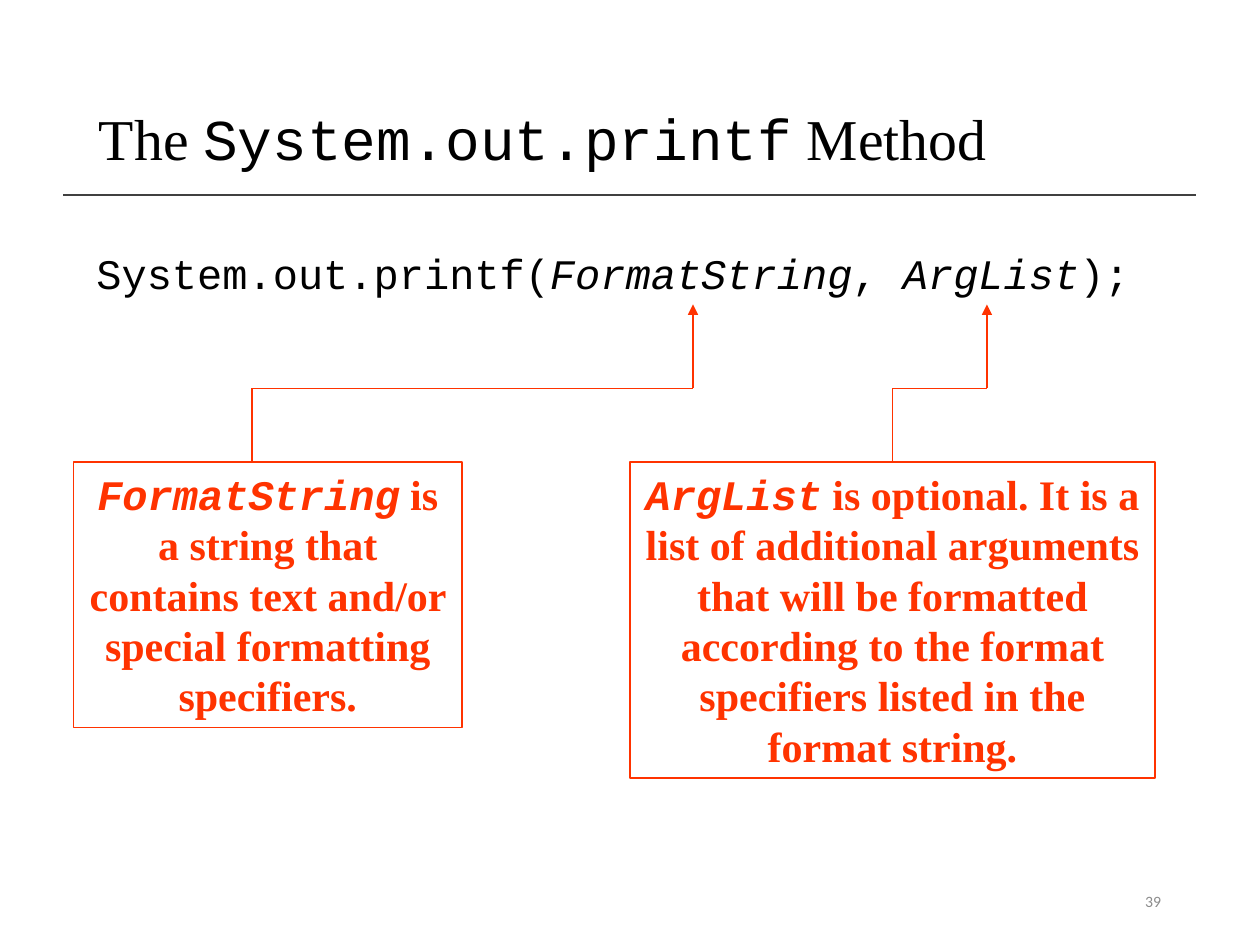
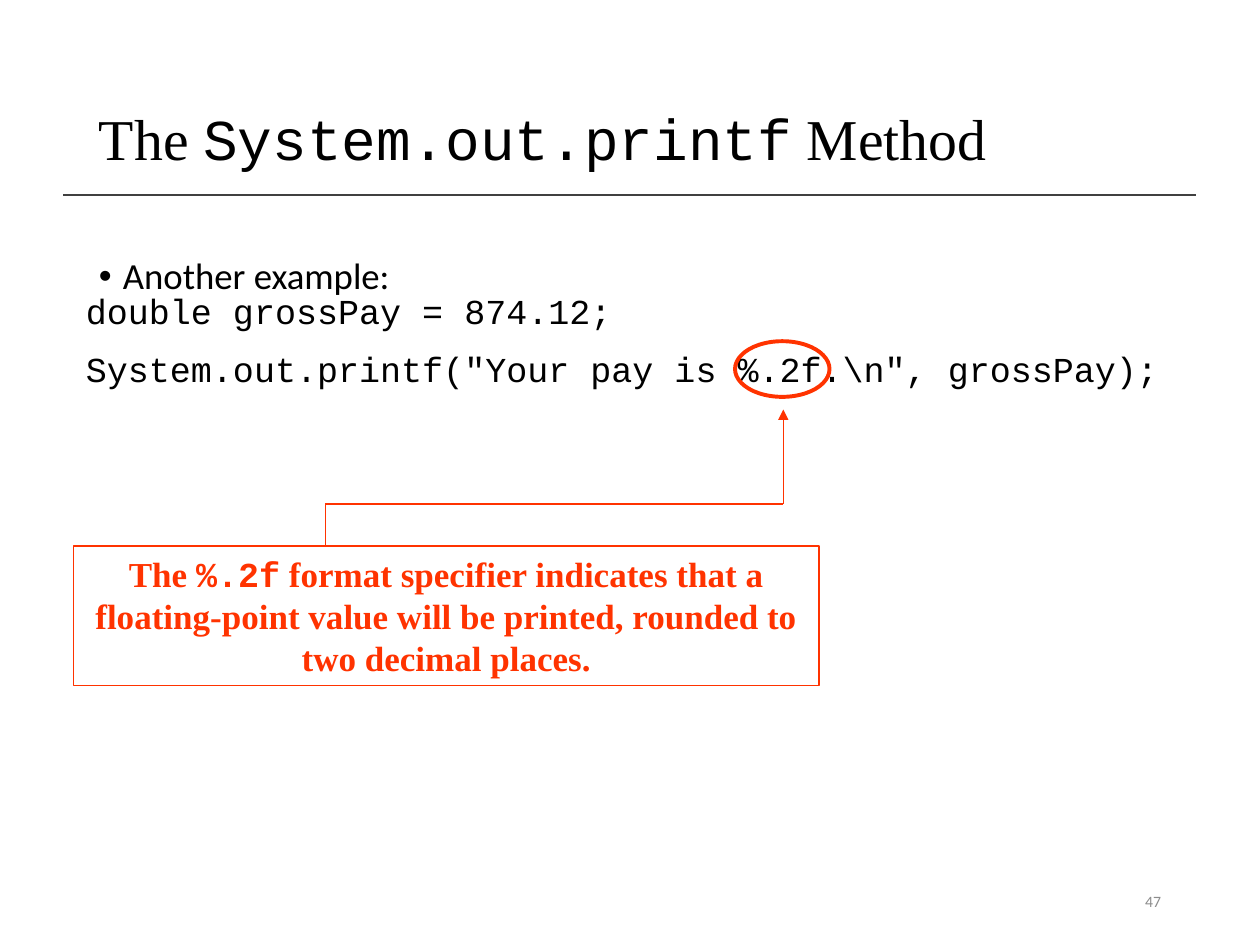
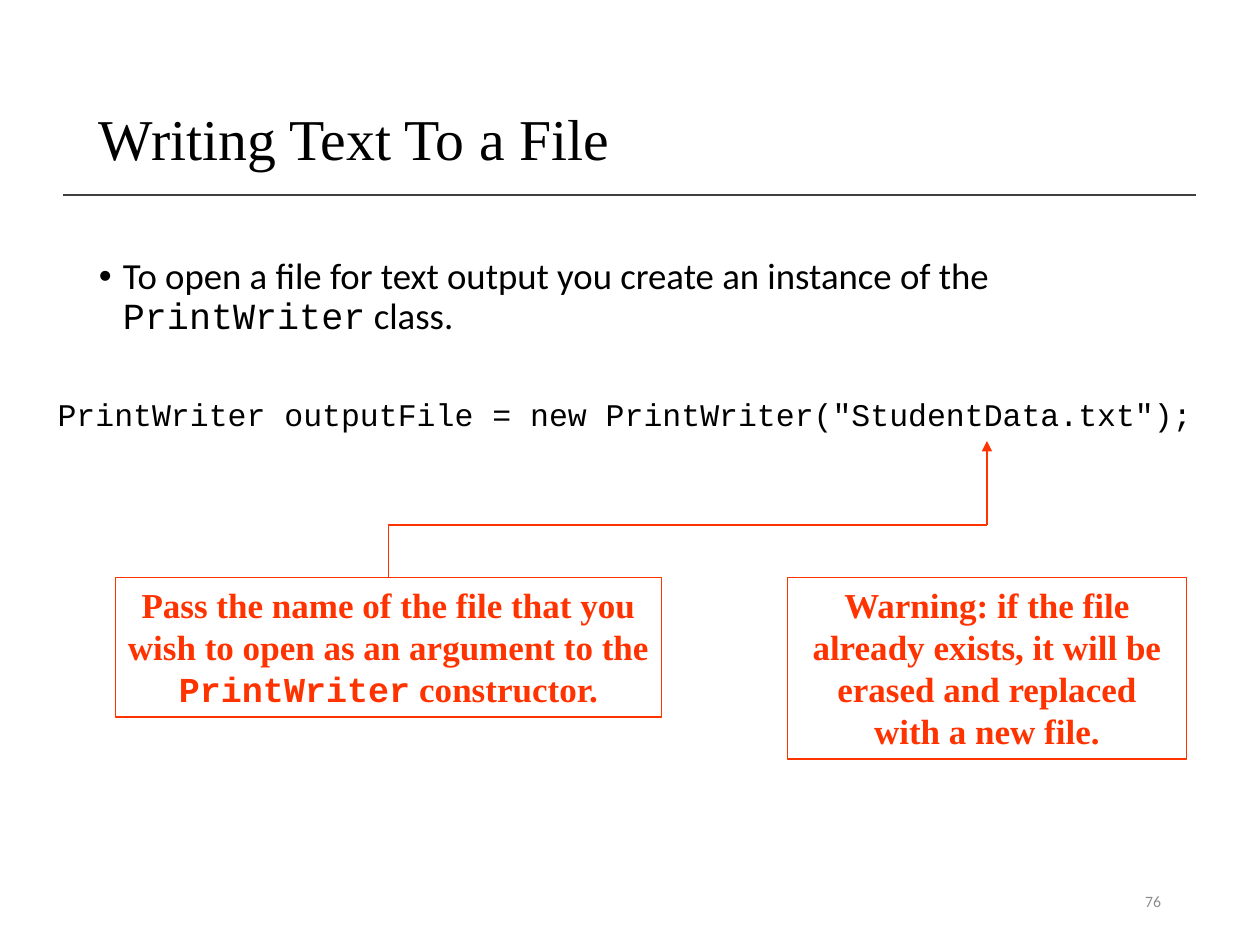
import dataclasses

import lxml.etree
import pptx
import pptx.dml.color
import pptx.enum.shapes
import pptx.enum.text
import pptx.oxml.ns
import pptx.util

ALIGN = pptx.enum.text.PP_ALIGN
ANCHOR = pptx.enum.text.MSO_ANCHOR
SHAPE = pptx.enum.shapes.MSO_SHAPE


@dataclasses.dataclass(frozen=True)
class Theme:
    ink: str = "000000"
    accent: str = "FF3300"
    rule: str = "404040"
    muted: str = "8C8C8C"
    serif: str = "Times New Roman"
    code: str = "Courier New"
    sans: str = "Calibri"
    title_size: int = 33
    body_size: int = 21
    number_size: int = 9


THEME = Theme()


# Grid: 120 columns by 90 rows, twelve to the inch
def grid(units):
    return pptx.util.Inches(units / 12)


def area(left, top, width, height):
    return grid(left), grid(top), grid(width), grid(height)


def rgb(value):
    return pptx.dml.color.RGBColor.from_string(value)


# Text
def serif(text):
    return text, THEME.serif, False


def code(text, italic=False):
    return text, THEME.code, italic


def sans(text):
    return text, THEME.sans, False


def add_runs(paragraph, runs, size, color, bold=False):
    for text, font_name, italic in runs:
        run = paragraph.add_run()
        run.text = text
        run.font.name = font_name
        run.font.size = pptx.util.Pt(size)
        run.font.bold = bold
        run.font.italic = italic
        run.font.color.rgb = rgb(color)


def add_text(slide, place, runs, size, color=THEME.ink, align=ALIGN.LEFT, anchor=ANCHOR.TOP):
    frame = slide.shapes.add_textbox(*area(*place)).text_frame
    frame.word_wrap = True
    frame.vertical_anchor = anchor
    paragraph = frame.paragraphs[0]
    paragraph.alignment = align
    add_runs(paragraph, runs, size, color)
    return frame


def add_bullet(slide, runs):
    frame = add_text(slide, (8.25, 24, 103.5, 57), runs, THEME.body_size)
    paragraph = frame.paragraphs[0]
    paragraph.line_spacing = 0.9
    properties = paragraph._p.get_or_add_pPr()
    indent = pptx.util.Inches(0.19)
    properties.set("marL", str(indent))
    properties.set("indent", str(-indent))
    bullet_font = lxml.etree.SubElement(properties, pptx.oxml.ns.qn("a:buFont"))
    bullet_font.set("typeface", "Arial")
    bullet = lxml.etree.SubElement(properties, pptx.oxml.ns.qn("a:buChar"))
    bullet.set("char", "•")


# Lines and outlines
def add_line(slide, start, end, color=THEME.accent, width=0.75, arrow=False):
    connector = slide.shapes.add_connector(
        pptx.enum.shapes.MSO_CONNECTOR.STRAIGHT, *map(grid, start + end))
    connector.line.color.rgb = rgb(color)
    connector.line.width = pptx.util.Pt(width)
    properties = connector.element.spPr
    if arrow:
        outline = properties.find(pptx.oxml.ns.qn("a:ln"))
        head = lxml.etree.SubElement(outline, pptx.oxml.ns.qn("a:tailEnd"))
        head.set("type", "triangle")
    lxml.etree.SubElement(properties, pptx.oxml.ns.qn("a:effectLst"))
    return connector


def add_outline(slide, preset, place, width=0.75):
    shape = slide.shapes.add_shape(preset, *area(*place))
    shape.shadow.inherit = False
    shape.fill.background()
    shape.line.color.rgb = rgb(THEME.accent)
    shape.line.width = pptx.util.Pt(width)
    return shape


def add_callout(slide, place, runs, size):
    shape = add_outline(slide, SHAPE.RECTANGLE, place)
    frame = shape.text_frame
    frame.word_wrap = True
    frame.auto_size = pptx.enum.text.MSO_AUTO_SIZE.SHAPE_TO_FIT_TEXT
    frame.vertical_anchor = ANCHOR.TOP
    paragraph = frame.paragraphs[0]
    paragraph.alignment = ALIGN.CENTER
    add_runs(paragraph, runs, size, THEME.accent, bold=True)
    return shape


def add_elbow_arrow(slide, callout, target, bend_row, start_column=None):
    """Rise from the callout, turn at bend_row, and point up at the target.

    Without a start column the arrow is joined to the middle of the top side.
    """
    start_row = callout.top / grid(1)
    joined = start_column is None
    if joined:
        start_column = (callout.left + callout.width / 2) / grid(1)
    bend, corner = (start_column, bend_row), (target[0], bend_row)
    stem = add_line(slide, (start_column, start_row), bend)
    if joined:
        stem.begin_connect(callout, 0)
    add_line(slide, bend, corner)
    add_line(slide, corner, target, arrow=True)


# Parts that every slide shares
def add_page(presentation, title_runs, number):
    slide = presentation.slides.add_slide(presentation.slide_layouts[6])
    add_line(slide, (6, 18.6), (113.9, 18.6), THEME.rule, 1)
    title = add_text(slide, (8.25, 4.8, 103.5, 17.4), title_runs, THEME.title_size,
                     anchor=ANCHOR.MIDDLE)
    title.paragraphs[0].line_spacing = 0.9
    add_text(slide, (84.75, 83.4, 27, 4.8), [sans(str(number))], THEME.number_size,
             THEME.muted, ALIGN.RIGHT, ANCHOR.MIDDLE)
    return slide


PRINTF_TITLE = [serif("The "), code("System.out.printf"), serif(" Method")]


def build_printf_syntax(presentation):
    slide = add_page(presentation, PRINTF_TITLE, 39)
    add_text(slide, (8, 23, 102, 11.75), [
        code("System.out.printf("), code("FormatString", italic=True), code(", "),
        code("ArgList", italic=True), code(");")], 24)
    format_box = add_callout(slide, (7, 44, 37, 25.3), [
        code("FormatString", italic=True),
        serif(" is a string that contains text and/or special formatting specifiers.")], 24)
    argument_box = add_callout(slide, (60, 44, 50, 30.1), [
        code("ArgList", italic=True),
        serif(" is optional. It is a list of additional arguments that will be formatted "
              "according to the format specifiers listed in the format string.")], 24)
    add_elbow_arrow(slide, format_box, (66, 29), 37, start_column=24)
    add_elbow_arrow(slide, argument_box, (94, 29), 37)


def build_printf_example(presentation):
    slide = add_page(presentation, PRINTF_TITLE, 47)
    add_bullet(slide, [sans("Another example:")])
    listing = add_text(slide, (7, 27, 109, 11.6), [code("double grossPay = 874.12;")], 20)
    print_line = listing.add_paragraph()
    print_line.space_before = pptx.util.Pt(9)
    add_runs(print_line, [code('System.out.printf("Your pay is %.2f.\\n", grossPay);')],
             20, THEME.ink)
    add_outline(slide, SHAPE.OVAL, (70, 32.5, 9, 5.3), 2.25)
    specifier_box = add_callout(slide, (7, 52, 71, 13.3), [
        serif("The "), code("%.2f"),
        serif(" format specifier indicates that a floating-point value will be printed, "
              "rounded to two decimal places.")], 20)
    add_elbow_arrow(slide, specifier_box, (74.6, 39), 48, start_column=31)


def build_file_writing(presentation):
    slide = add_page(presentation, [serif("Writing Text To a File")], 76)
    add_bullet(slide, [
        sans("To open a file for text output you create an instance of the "),
        code("PrintWriter"), sans(" class.")])
    add_text(slide, (2, 37, 115, 4.8), [
        code('PrintWriter outputFile = new PrintWriter("StudentData.txt");')],
        18, align=ALIGN.CENTER)
    name_box = add_callout(slide, (11, 55, 52, 13.3), [
        serif("Pass the name of the file that you wish to open as an argument to the "),
        code("PrintWriter"), serif(" constructor.")], 20)
    add_elbow_arrow(slide, name_box, (94, 42), 50)
    add_callout(slide, (75, 55, 38, 17.3), [
        serif("Warning: if the file already exists, it will be erased and replaced "
              "with a new file.")], 20)


def main():
    presentation = pptx.Presentation()
    presentation.slide_width = grid(120)
    presentation.slide_height = grid(90)
    build_printf_syntax(presentation)
    build_printf_example(presentation)
    build_file_writing(presentation)
    presentation.save("out.pptx")


if __name__ == "__main__":
    main()
